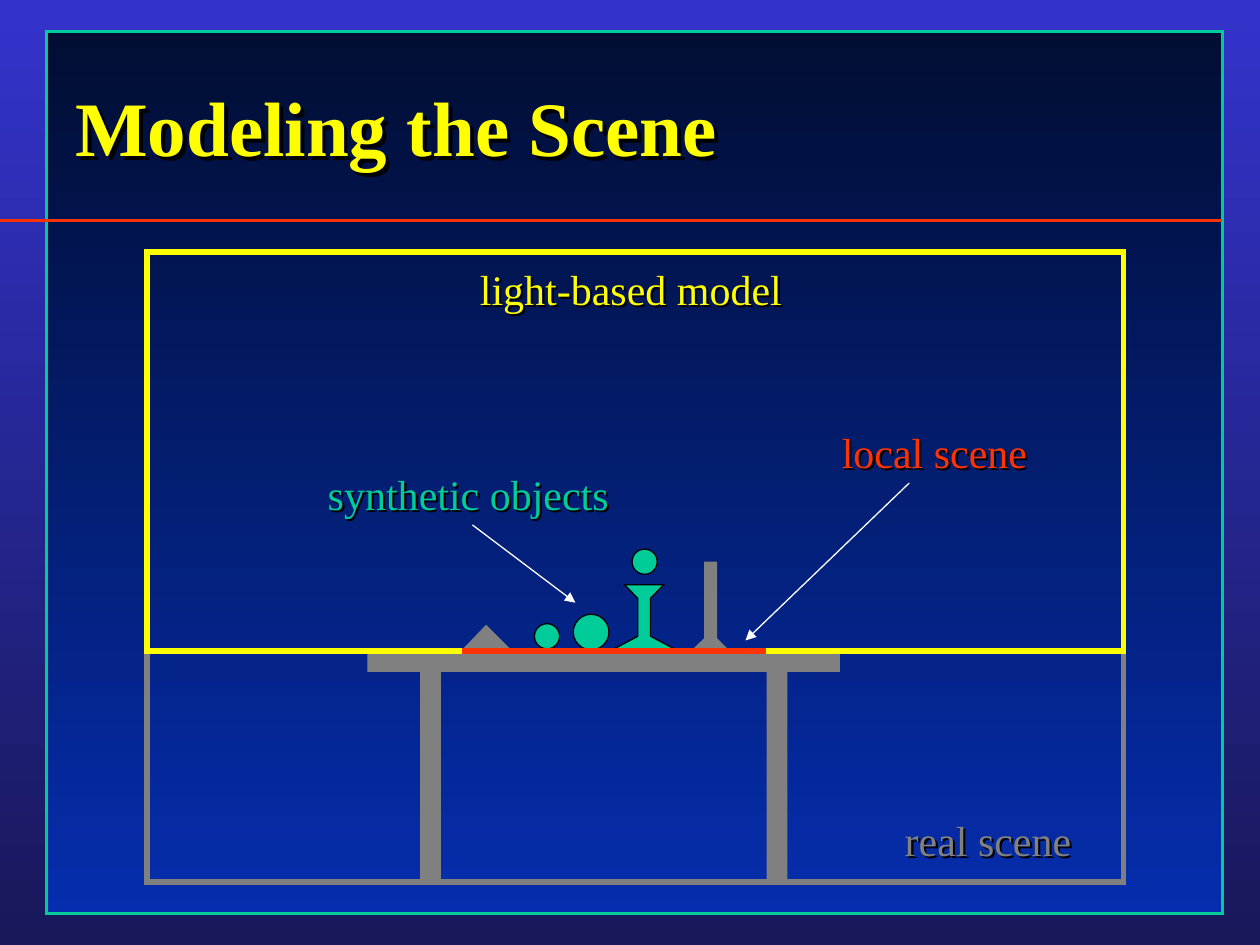
from lxml.etree import SubElement
from pptx import Presentation
from pptx.dml.color import RGBColor
from pptx.enum.shapes import MSO_CONNECTOR, MSO_SHAPE
from pptx.enum.text import MSO_ANCHOR, MSO_AUTO_SIZE, PP_ALIGN
from pptx.oxml.ns import qn
from pptx.util import Inches, Pt

COLORS = {
    "page top": "3333CC", "page bottom": "18185A",
    "panel top": "010D33", "panel bottom": "052DAD",
    "synthetic": "00CC99", "local": "FF3300", "model": "FFFF00",
    "real": "808080", "arrow": "FFFFFF", "outline": "000000",
}
COLUMNS, ROWS = 120, 90
SHADOW_PER_POINT = 900  # EMU of shadow distance for each point of text size


def rgb(name):
    return RGBColor.from_string(COLORS[name])


class SceneSlide:
    """Draws on one slide; every length is in grid columns and rows."""

    font_name = "Times New Roman"

    def __init__(self, deck):
        self.slide = deck.slides.add_slide(deck.slide_layouts[6])
        self.shapes = self.slide.shapes
        self.column = deck.slide_width / COLUMNS
        self.row = deck.slide_height / ROWS

    def point(self, x, y):
        return round(x * self.column), round(y * self.row)

    def box(self, x, y, width, height):
        return *self.point(x, y), *self.point(width, height)

    def gradient(self, fill, top, bottom):
        fill.gradient()
        fill.gradient_angle = 270
        for stop, name in zip(fill.gradient_stops, (top, bottom)):
            stop.color.rgb = rgb(name)

    def style(self, shape, fill=None, line=None, weight=0.75):
        shape.shadow.inherit = False
        if fill:
            shape.fill.solid()
            shape.fill.fore_color.rgb = rgb(fill)
        else:
            shape.fill.background()
        if line:
            shape.line.color.rgb = rgb(line)
            shape.line.width = Pt(weight)
            SubElement(shape.line._get_or_add_ln(), qn("a:miter"), lim="800000")
        else:
            shape.line.fill.background()
        return shape

    def rect(self, *area, **look):
        shape = self.shapes.add_shape(MSO_SHAPE.RECTANGLE, *self.box(*area))
        return self.style(shape, **look)

    def ball(self, x, y, size):
        shape = self.shapes.add_shape(MSO_SHAPE.OVAL, *self.box(x, y, size, size))
        self.style(shape, fill="synthetic", line="outline")

    def outline(self, corners, **look):
        start, *rest = [self.point(x, y) for x, y in corners]
        builder = self.shapes.build_freeform(*start)
        builder.add_line_segments(rest, close=True)
        self.style(builder.convert_to_shape(), **look)

    def line(self, start, end, color, weight, arrow=False):
        line = self.shapes.add_connector(
            MSO_CONNECTOR.STRAIGHT, *self.point(*start), *self.point(*end))
        line.line.color.rgb = rgb(color)
        line.line.width = Pt(weight)
        if arrow:
            SubElement(line.line._get_or_add_ln(), qn("a:tailEnd"), type="triangle")
        SubElement(line._element.spPr, qn("a:effectLst"))

    def cast_shadow(self, box, size):
        effects = SubElement(box._element.spPr, qn("a:effectLst"))
        shadow = SubElement(effects, qn("a:outerShdw"), dir="2700000", algn="tl",
                            dist=str(size * SHADOW_PER_POINT))
        SubElement(shadow, qn("a:srgbClr"), val=COLORS["outline"])

    def text(self, words, area, color, size=24, bold=False, align=PP_ALIGN.CENTER,
             anchor=MSO_ANCHOR.TOP, wrap=False):
        box = self.shapes.add_textbox(*self.box(*area))
        frame = box.text_frame
        frame.text = words
        frame.word_wrap = wrap
        frame.auto_size = MSO_AUTO_SIZE.NONE if wrap else MSO_AUTO_SIZE.SHAPE_TO_FIT_TEXT
        frame.vertical_anchor = anchor
        paragraph = frame.paragraphs[0]
        paragraph.alignment = align
        run = paragraph.runs[0]
        run.font.name = self.font_name
        run.font.size = Pt(size)
        run.font.bold = bold
        run.font.color.rgb = rgb(color)
        self.cast_shadow(box, size)


def main():
    deck = Presentation()
    deck.slide_width, deck.slide_height = Inches(10), Inches(7.5)
    scene = SceneSlide(deck)

    # Backdrop: page, framed panel and rule under the title
    scene.gradient(scene.slide.background.fill, "page top", "page bottom")
    panel = scene.rect(4.45, 3, 112, 84, line="synthetic", weight=1.75)
    scene.gradient(panel.fill, "panel top", "panel bottom")
    scene.line((0, 21), (116.4, 21), "local", 2.25)

    # Real scene: cone, post, room and table
    table_top = 62
    scene.outline([(43.9, table_top), (46.3, 59.5), (48.8, table_top)], fill="real")
    scene.outline([(67.05, 60.8), (65.8, table_top), (69.5, table_top),
                   (68.3, 60.8), (68.3, 53.5), (67.05, 53.5)], fill="real")
    scene.rect(14, 24, 93, 60, line="real", weight=3)
    scene.rect(35, table_top, 45, 2, fill="real")
    for leg in (40, 73):
        scene.rect(leg, 64, 2, 20, fill="real")
    scene.text("real scene", (84.9, 77, 18.4, 6), "real")

    # Title
    scene.text("Modeling the Scene", (6, 4, 96, 16), "model", size=44, bold=True,
               align=PP_ALIGN.LEFT, anchor=MSO_ANCHOR.MIDDLE, wrap=True)

    # Synthetic objects: two balls and a figure
    for x, y, size in ((50.9, 59.4, 2.4), (54.6, 58.5, 3.4), (60.2, 52.3, 2.4)):
        scene.ball(x, y, size)
    middle = 61.35
    half = [(3.05, 61.9), (0.6, 60.6), (0.6, 57), (1.85, 55.7)]
    figure = [(middle + dx, y) for dx, y in half]
    figure += [(middle - dx, y) for dx, y in reversed(half)]
    scene.outline(figure, fill="synthetic", line="outline")
    scene.text("synthetic objects", (30, 44, 29.2, 6), "synthetic")
    scene.line((45, 50), (54.8, 57.4), "arrow", 0.75, arrow=True)

    # Light-based model
    scene.rect(14, 24, 93, 38, line="model", weight=3)
    scene.text("light-based model", (44.5, 24.5, 31.2, 6), "model")

    # Local scene
    scene.text("local scene", (78.9, 40, 20.2, 6), "local")
    scene.line((86.6, 46), (71, 61), "arrow", 0.75, arrow=True)
    scene.line((44, table_top), (73, table_top), "local", 3)

    deck.save("out.pptx")


if __name__ == "__main__":
    main()
